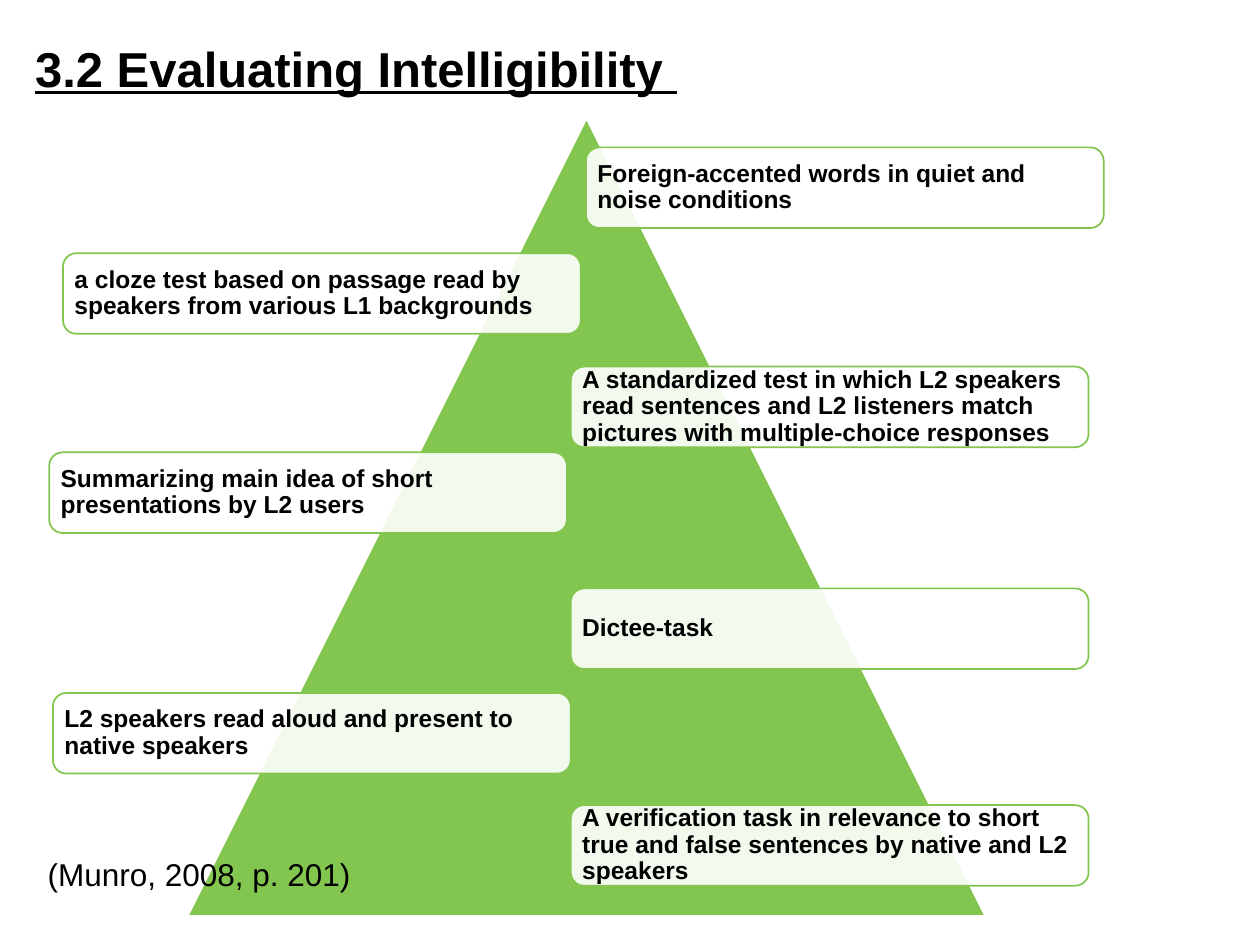
from lxml.etree import SubElement
from pptx import Presentation
from pptx.dml.color import RGBColor
from pptx.enum.shapes import MSO_SHAPE as Shape
from pptx.enum.text import MSO_ANCHOR as Anchor, PP_ALIGN as Align
from pptx.oxml.ns import qn
from pptx.util import Inches, Pt

BLACK = RGBColor(0x00, 0x00, 0x00)
WHITE = RGBColor(0xFF, 0xFF, 0xFF)
GREEN = RGBColor(0x82, 0xC6, 0x50)

COLUMNS, ROWS = 100, 75
CARD_WIDTH, CARD_HEIGHT = 41.1, 6.4

EVALUATION_TASKS = [
    (46.5, 11.7, "Foreign-accented words in quiet and noise conditions"),
    (5, 20.1, "a cloze test based on passage read by speakers from various L1 backgrounds"),
    (45.3, 29.1, "A standardized test in which L2 speakers read sentences and L2 listeners "
                 "match pictures with multiple-choice responses"),
    (3.9, 35.9, "Summarizing main idea of short presentations by L2 users"),
    (45.3, 46.7, "Dictee-task"),
    (4.2, 55, "L2 speakers read aloud and present to native speakers"),
    (45.3, 63.9, "A verification task in relevance to short true and false sentences "
                 "by native and L2 speakers"),
]


class SlideBuilder:
    font_name = "Arial"
    card_inset = Inches(0.06)

    def __init__(self, presentation):
        self.column = presentation.slide_width / COLUMNS
        self.row = presentation.slide_height / ROWS
        self.slide = presentation.slides.add_slide(presentation.slide_layouts[6])

    def place(self, left, top, width, height):
        return (round(left * self.column), round(top * self.row),
                round(width * self.column), round(height * self.row))

    def fill_text(self, frame, text, size, spacing=1, **font_format):
        paragraph = frame.paragraphs[0]
        paragraph.alignment = Align.LEFT
        paragraph.line_spacing = spacing
        run = paragraph.add_run()
        run.text = text
        run.font.color.rgb = BLACK
        values = {"name": self.font_name, "size": Pt(size), **font_format}
        for attribute, value in values.items():
            setattr(run.font, attribute, value)

    def label(self, area, text, size, wrap=True, **text_format):
        frame = self.slide.shapes.add_textbox(*self.place(*area)).text_frame
        frame.word_wrap = wrap
        self.fill_text(frame, text, size, **text_format)

    def panel(self, kind, area, fill, line, opacity=100):
        panel = self.slide.shapes.add_shape(kind, *self.place(*area))
        panel.shadow.inherit = False
        panel.fill.solid()
        panel.fill.fore_color.rgb = fill
        panel.line.color.rgb = line
        panel.line.width = Pt(1)
        if opacity < 100:
            color = panel.element.spPr.find(qn("a:solidFill"))[0]
            SubElement(color, qn("a:alpha"), val=str(opacity * 1000))
        return panel

    def card(self, left, top, text):
        area = (left, top, CARD_WIDTH, CARD_HEIGHT)
        frame = self.panel(Shape.ROUNDED_RECTANGLE, area, WHITE, GREEN, 90).text_frame
        frame_format = {"word_wrap": True, "vertical_anchor": Anchor.MIDDLE}
        for side in ("left", "top", "right", "bottom"):
            frame_format[f"margin_{side}"] = self.card_inset
        for attribute, value in frame_format.items():
            setattr(frame, attribute, value)
        self.fill_text(frame, text, 14, spacing=0.9, bold=True)


def main():
    presentation = Presentation()
    presentation.slide_width = Inches(10)
    presentation.slide_height = Inches(7.5)

    builder = SlideBuilder(presentation)
    builder.label((1.8, 3.1, 96.9, 68), "3.2 Evaluating Intelligibility ", 28,
                  spacing=0.9, bold=True, underline=True)
    builder.panel(Shape.ISOSCELES_TRIANGLE, (14.9, 9.4, 63.3, 63.3), GREEN, WHITE)
    for left, top, task in EVALUATION_TASKS:
        builder.card(left, top, task)
    builder.label((2.8, 67.4, 26.3, 4), "(Munro, 2008, p. 201)", 18, wrap=False)

    presentation.save("out.pptx")


if __name__ == "__main__":
    main()
